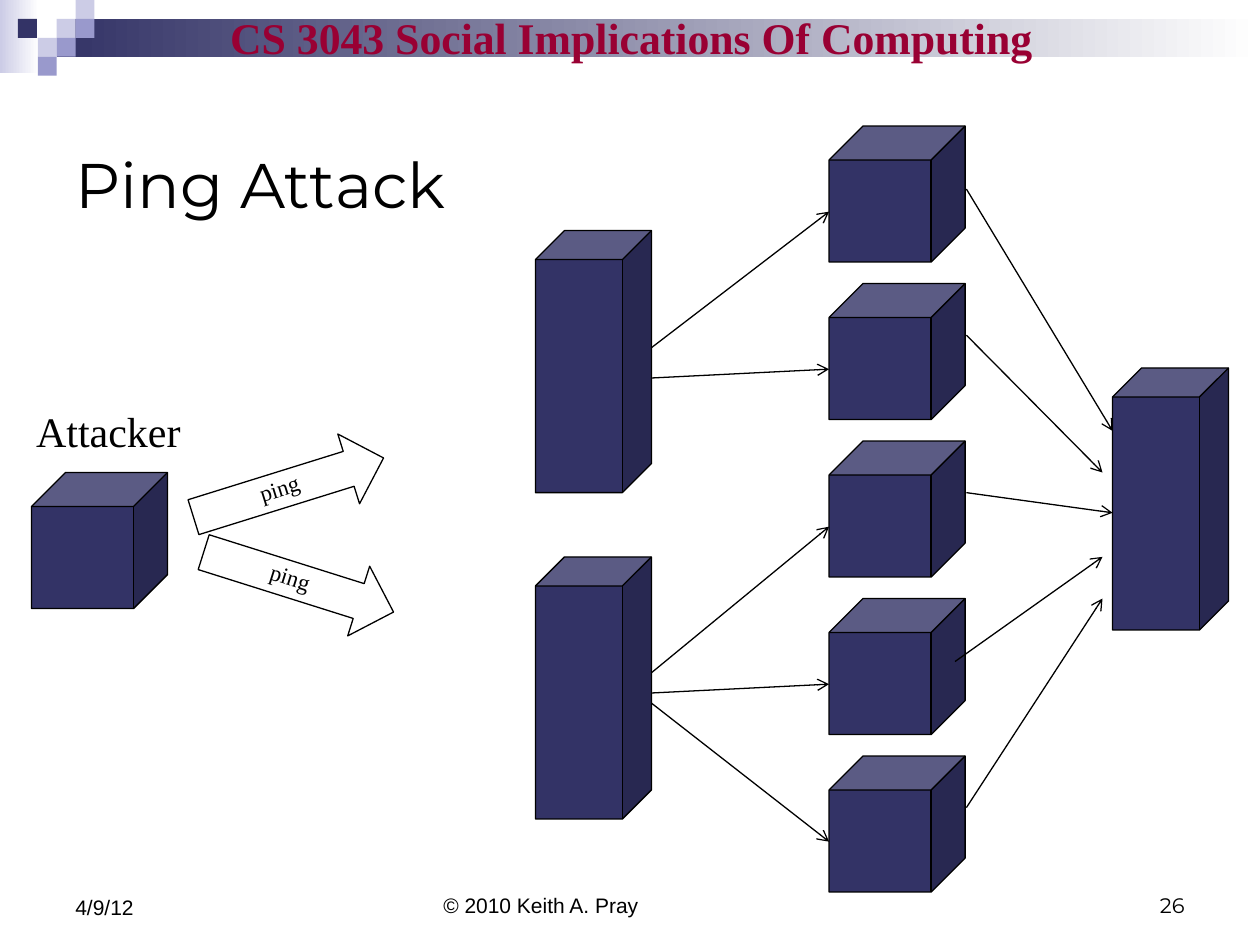
from lxml.etree import SubElement
from pptx import Presentation
from pptx.dml.color import RGBColor
from pptx.enum.shapes import MSO_CONNECTOR as Connector, MSO_SHAPE as Shape
from pptx.enum.text import MSO_ANCHOR as Anchor, PP_ALIGN as Align
from pptx.oxml.ns import qn
from pptx.util import Inches, Pt

THEME = {
    "navy": "333366", "violet": "9999CC", "lilac": "CCCCE6", "white": "FFFFFF",
    "black": "000000", "crimson": "990033",
    "serif": "Times New Roman", "sans": "Arial", "display": "Montserrat",
    "header": 25, "title": 36, "label": 24, "ping": 13, "footer": 12, "line": 0.75,
}

BANDS = [((0, 0, 0.31, 0.58), "lilac"), ((0.45, 0.15, 9.55, 0.3), "navy")]
TILE = 0.15
TILES = [(3, 1, "lilac"), (4, 0, "lilac"), (4, 1, "violet"), (2, 2, "lilac"),
         (0.95, 1, "navy"), (3, 2, "violet"), (2, 3, "violet")]

TITLE = ("Ping Attack", (0.5, 0.83, 9, 1.25))
LABELS = [
    ("CS 3043 Social Implications Of Computing", (1.72, 0.03, 6.58, 0.52),
     "serif", "header", "crimson", True, Align.CENTER, Anchor.MIDDLE, False),
    ("© 2010 Keith A. Pray", (3.42, 6.83, 3.17, 0.5),
     "sans", "footer", "black", False, Align.LEFT, Anchor.BOTTOM, True),
    ("26", (7.17, 6.83, 2.33, 0.5),
     "display", "footer", "black", False, Align.RIGHT, Anchor.BOTTOM, True),
    ("4/9/12", (0.5, 6.83, 2.33, 0.52),
     "sans", "footer", "black", False, Align.LEFT, Anchor.BOTTOM, True),
    ("Attacker", (0.17, 3.17, 1.38, 0.51),
     "serif", "label", "black", False, Align.CENTER, Anchor.TOP, False),
]

HOST_SIZE = (1.08, 1.08)
TOWER_SIZE = (0.92, 2.08)
ATTACKER = (0.25, 3.75)
TOWERS = [(4.25, 1.83), (4.25, 4.42), (8.83, 2.92)]
HOST_LEFT, HOST_TOP, HOST_STEP, HOST_COUNT = 6.58, 1, 1.25, 5

PINGS = [((1.5, 3.58, 1.58, 0.58), -17.3), ((1.58, 4.33, 1.58, 0.58), 17.5)]

ROUTER_RIGHT = 5.17
REQUESTS = [(2.76, 1.68), (3, 2.93), (5.34, 4.18), (5.5, 5.43), (5.58, 6.68)]
REPLIES = [((7.67, 1.5), (8.83, 3.42)), ((7.67, 2.66), (8.75, 3.75)),
           ((7.67, 3.91), (8.83, 4.07)), ((7.58, 5.25), (8.75, 4.42)),
           ((7.67, 6.41), (8.75, 4.75))]


def color(name):
    return RGBColor.from_string(THEME[name])


def inches(values):
    return [Inches(value) for value in values]


def add_solid(slide, kind, place, fill=None, outlined=True):
    shape = slide.shapes.add_shape(kind, *inches(place))
    shape.shadow.inherit = False
    if fill:
        shape.fill.solid()
        shape.fill.fore_color.rgb = color(fill)
    else:
        shape.fill.background()
    if outlined:
        shape.line.color.rgb = color("black")
        shape.line.width = Pt(THEME["line"])
    else:
        shape.line.fill.background()
    return shape


def add_band(slide, place, start):
    band = add_solid(slide, Shape.RECTANGLE, place, start, outlined=False)
    band.fill.gradient()
    band.fill.gradient_angle = 0
    for stop, name in zip(band.fill.gradient_stops, (start, "white")):
        stop.color.rgb = color(name)


def write(shape, text, font, size, ink="black", bold=False,
          align=Align.LEFT, anchor=Anchor.MIDDLE, wrap=True):
    frame = shape.text_frame
    frame.word_wrap = wrap
    frame.vertical_anchor = anchor
    frame.text = text
    para = frame.paragraphs[0]
    para.alignment = align
    para.font.name = THEME[font]
    para.font.size = Pt(THEME[size])
    para.font.bold = bold
    para.font.color.rgb = color(ink)
    return para


def add_arrow(slide, start, end):
    arrow = slide.shapes.add_connector(Connector.STRAIGHT, *inches(start + end))
    arrow.line.color.rgb = color("black")
    arrow.line.width = Pt(THEME["line"])
    SubElement(arrow.line._get_or_add_ln(), qn("a:tailEnd"), type="arrow")
    SubElement(arrow._element.spPr, qn("a:effectLst"))


def main():
    deck = Presentation()
    deck.slide_width, deck.slide_height = inches((10, 7.5))
    slide = deck.slides.add_slide(deck.slide_layouts[5])

    for place, start in BANDS:
        add_band(slide, place, start)
    for column, row, fill in TILES:
        place = (column * TILE, row * TILE, TILE, TILE)
        add_solid(slide, Shape.RECTANGLE, place, fill, outlined=False)

    text, place = TITLE
    title = slide.shapes.title
    title.left, title.top, title.width, title.height = inches(place)
    write(title, text, "display", "title")
    for text, place, *style in LABELS:
        write(slide.shapes.add_textbox(*inches(place)), text, *style)

    hosts = [(HOST_LEFT, HOST_TOP + index * HOST_STEP) for index in range(HOST_COUNT)]
    cubes = [(spot, HOST_SIZE) for spot in [ATTACKER] + hosts]
    cubes += [(spot, TOWER_SIZE) for spot in TOWERS]
    for spot, size in cubes:
        add_solid(slide, Shape.CUBE, spot + size, "navy")

    for place, angle in PINGS:
        arrow = add_solid(slide, Shape.RIGHT_ARROW, place)
        arrow.rotation = angle
        para = write(arrow, "ping", "serif", "ping", align=Align.CENTER, wrap=False)
        para.line_spacing = 0.8

    requests = [((ROUTER_RIGHT, start), (HOST_LEFT, end)) for start, end in REQUESTS]
    for start, end in requests + REPLIES:
        add_arrow(slide, start, end)

    deck.save("out.pptx")


if __name__ == "__main__":
    main()
